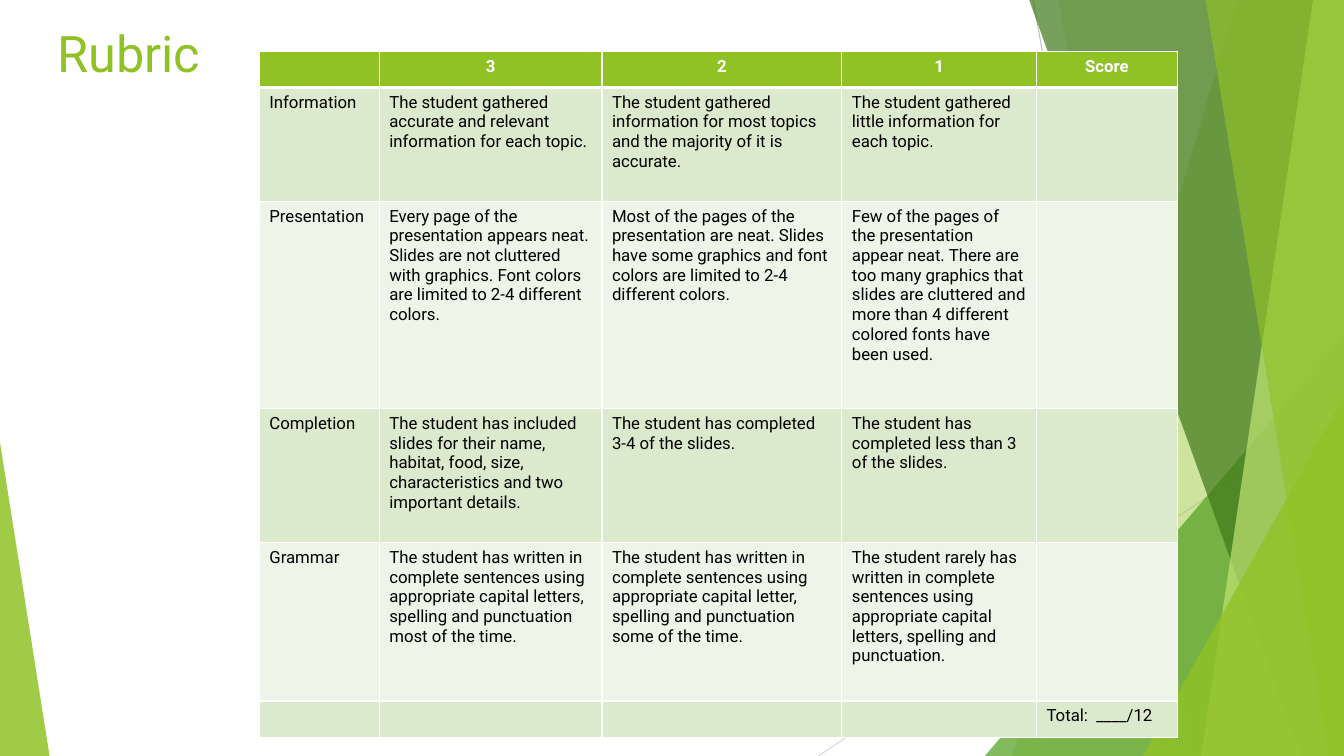
import pptx
import pptx.util
import pptx.dml.color
import pptx.enum.shapes
import pptx.enum.text
import pptx.oxml
import pptx.oxml.ns

Pt = pptx.util.Pt
RGB = pptx.dml.color.RGBColor.from_string
qn = pptx.oxml.ns.qn

theme = {
    "font": "Roboto", "title": 36, "body": 12,
    "lime": "90C226", "green": "54A021", "forest": "3F7819", "pale": "C0E474",
    "row_dark": "DBE9CD", "row_light": "EEF4E8",
    "white": "FFFFFF", "black": "000000", "grey": "BFBFBF", "light_grey": "D9D9D9",
}
W, H = 960, 540


def set_fill(sp, color, alpha):
    sp.shadow.inherit = False
    sp.line.fill.background()
    sp.fill.solid()
    sp.fill.fore_color.rgb = RGB(theme[color])
    clr = sp.fill._xPr.find(qn("a:solidFill"))[0]
    clr.append(pptx.oxml.parse_xml(
        f'<a:alpha {pptx.oxml.ns.nsdecls("a")} val="{alpha * 1000}"/>'))


def set_font(p, size, color, bold=False):
    p.font.name = theme["font"]
    p.font.size = Pt(theme[size])
    p.font.color.rgb = RGB(theme[color])
    p.font.bold = bold


prs = pptx.Presentation()
prs.slide_width, prs.slide_height = Pt(W), Pt(H)
s = prs.slides.add_slide(prs.slide_layouts[6])

for x1, y1, x2, y2, color in [(738, 0, 834, H, "grey"), (W, 290, 584.6, H, "light_grey")]:
    ln = s.shapes.add_connector(
        pptx.enum.shapes.MSO_CONNECTOR.STRAIGHT, Pt(x1), Pt(y1), Pt(x2), Pt(y2))
    ln.line.color.rgb = RGB(theme[color])
    ln.line.width = Pt(0.75)
    ln._element.spPr.append(pptx.oxml.parse_xml(
        f'<a:effectLst {pptx.oxml.ns.nsdecls("a")}/>'))

facets = [
    ("band", (884, 723), "lime", 30),
    ("band", (756, 852), "lime", 20),
    ("triangle", (703.5, 239.8, 256.5, 1), "green", 72),
    ("band", (735, 929.5), "forest", 70),
    ("band", (938, 858), "pale", 70),
    ("band", (861, 949), "lime", 65),
    ("triangle", (816.5, 283, 143.5, 1), "lime", 80),
    ("triangle", (0, 316, 35.4, 0), "lime", 85),
]
for kind, geometry, color, alpha in facets:
    if kind == "band":
        top_x, bottom_x = geometry
        fb = s.shapes.build_freeform(Pt(top_x), Pt(-0.5))
        fb.add_line_segments([(Pt(W), Pt(-0.5)), (Pt(W), Pt(H)), (Pt(bottom_x), Pt(H))])
        sp = fb.convert_to_shape()
    else:
        x, y, w, apex = geometry
        sp = s.shapes.add_shape(
            pptx.enum.shapes.MSO_SHAPE.ISOSCELES_TRIANGLE, Pt(x), Pt(y), Pt(w), Pt(H - y))
        sp.adjustments[0] = apex
    set_fill(sp, color, alpha)

tf = s.shapes.add_textbox(Pt(34), Pt(12.2), Pt(677), Pt(103.7)).text_frame
tf.word_wrap = True
tf.text = "Rubric"
set_font(tf.paragraphs[0], "title", "lime")

rubric = [
    ["", "3", "2", "1", "Score"],
    ["Information",
     "The student gathered accurate and relevant information for each topic.",
     "The student gathered information for most topics and the majority of it is accurate.",
     "The student gathered little information for each topic.", ""],
    ["Presentation",
     "Every page of the presentation appears neat. Slides are not cluttered with graphics. "
     "Font colors are limited to 2-4 different colors.",
     "Most of the pages of the presentation are neat. Slides have some graphics and font "
     "colors are limited to 2-4 different colors.",
     "Few of the pages of the presentation appear neat. There are too many graphics that "
     "slides are cluttered and more than 4 different colored fonts have been used.", ""],
    ["Completion",
     "The student has included slides for their name, habitat, food, size, characteristics "
     "and two important details.",
     "The student has completed 3-4 of the slides.",
     "The student has completed less than 3 of the slides.", ""],
    ["Grammar",
     "The student has written in complete sentences using appropriate capital letters, "
     "spelling and punctuation most of the time.",
     "The student has written in complete sentences using appropriate capital letter, "
     "spelling and punctuation some of the time.",
     "The student rarely has written in complete sentences using appropriate capital "
     "letters, spelling and punctuation.", ""],
    ["", "", "", "", "Total:  ____/12"],
]
col_widths = [85.7, 159.1, 171.4, 139, 100.8]
row_heights = [25.9, 81.4, 148, 95.8, 113, 25.9]
tbl = s.shapes.add_table(
    len(row_heights), len(col_widths), Pt(185.2), Pt(36.7),
    Pt(sum(col_widths)), Pt(sum(row_heights))).table
for col, w in zip(tbl.columns, col_widths):
    col.width = Pt(w)
for row, h in zip(tbl.rows, row_heights):
    row.height = Pt(h)

for i, texts in enumerate(rubric):
    header = i == 0
    fill = "lime" if header else "row_dark" if i % 2 else "row_light"
    for j, text in enumerate(texts):
        cell = tbl.cell(i, j)
        cell.text = text
        p = cell.text_frame.paragraphs[0]
        set_font(p, "body", "white" if header else "black", header)
        if header:
            p.alignment = pptx.enum.text.PP_ALIGN.CENTER
        cell.fill.solid()
        cell.fill.fore_color.rgb = RGB(theme[fill])
        tcPr = cell._tc.get_or_add_tcPr()
        for k, side in enumerate("LRTB"):
            thick = (i, side) in [(0, "B"), (1, "T")]
            tcPr.insert(k, pptx.oxml.parse_xml(
                f'<a:ln{side} {pptx.oxml.ns.nsdecls("a")} w="{Pt(3 if thick else 1)}">'
                f'<a:solidFill><a:srgbClr val="{theme["white"]}"/></a:solidFill></a:ln{side}>'))

prs.save("out.pptx")
